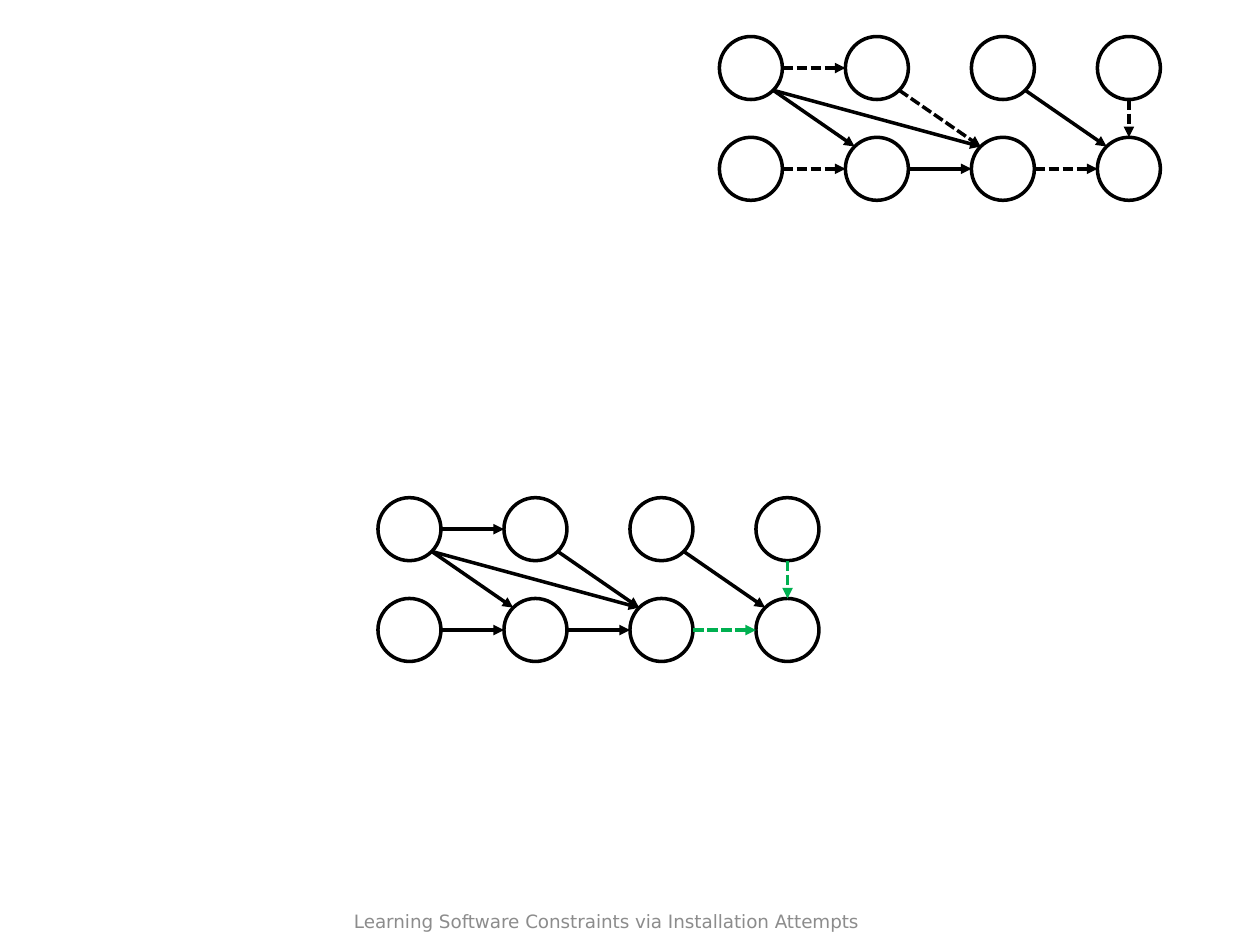
from math import hypot

from lxml.etree import SubElement
from pptx import Presentation
from pptx.dml.color import RGBColor
from pptx.enum.dml import MSO_LINE
from pptx.enum.shapes import MSO_CONNECTOR, MSO_SHAPE
from pptx.enum.text import MSO_ANCHOR
from pptx.oxml.ns import qn
from pptx.util import Pt

PX = 9144
COLORS = {"black": "000000", "white": "FFFFFF", "green": "00B050", "gray": "8C8C8C"}
NODE, COL_STEP, ROW_STEP, COLS, ROWS = 50, 100, 80, 4, 2
TOP, BOTTOM = 0, 1
EDGES = {
    "top link": ((0, TOP), (1, TOP)),
    "bottom link": ((0, BOTTOM), (1, BOTTOM)),
    "middle link": ((1, BOTTOM), (2, BOTTOM)),
    "last link": ((2, BOTTOM), (3, BOTTOM)),
    "first drop": ((0, TOP), (1, BOTTOM)),
    "long drop": ((0, TOP), (2, BOTTOM)),
    "second drop": ((1, TOP), (2, BOTTOM)),
    "third drop": ((2, TOP), (3, BOTTOM)),
    "straight drop": ((3, TOP), (3, BOTTOM)),
}
UNKNOWN = {"dash_style": MSO_LINE.SQUARE_DOT}
CANDIDATE = {"dash_style": MSO_LINE.SQUARE_DOT, "color": "green"}
OPEN_EDGES = ("top link", "bottom link", "last link", "second drop", "straight drop")
TESTED_EDGES = ("last link", "straight drop")


def rgb(name):
    """Return the named colour."""
    return RGBColor.from_string(COLORS[name])


def set_line(line, color="black", **formats):
    """Apply the common stroke and any further line formats."""
    line.color.rgb = rgb(color)
    for key, value in {"width": Pt(2), **formats}.items():
        setattr(line, key, value)


def add_node(s, x, y):
    """Draw one empty graph node."""
    sp = s.shapes.add_shape(MSO_SHAPE.OVAL, *(v * PX for v in (x, y, NODE, NODE)))
    sp.shadow.inherit = False
    sp.fill.solid()
    sp.fill.fore_color.rgb = rgb("white")
    set_line(sp.line)


def add_edge(s, x, y, start, end, formats):
    """Draw an arrow between the facing rims of two grid nodes."""
    side = [(b > a) - (b < a) for a, b in zip(start, end)]
    rim = [NODE / 2 * v / hypot(*side) for v in side]
    points = []
    for (col, row), sign in ((start, 1), (end, -1)):
        points.append(x + col * COL_STEP + NODE / 2 + sign * rim[0])
        points.append(y + row * ROW_STEP + NODE / 2 + sign * rim[1])
    cxn = s.shapes.add_connector(MSO_CONNECTOR.STRAIGHT, *(round(v * PX) for v in points))
    set_line(cxn.line, **formats)
    SubElement(cxn.line._get_or_add_ln(), qn("a:tailEnd"), type="triangle")
    SubElement(cxn._element.spPr, qn("a:effectLst"))


def add_graph(s, x, y, styles):
    """Draw the dependency graph with its top left corner at x, y."""
    for row in range(ROWS):
        for col in range(COLS):
            add_node(s, x + col * COL_STEP, y + row * ROW_STEP)
    for name, (start, end) in EDGES.items():
        add_edge(s, x, y, start, end, styles.get(name, {}))


def add_footer(s, x, y, w, h, text):
    """Place the footer line in the given box."""
    tf = s.shapes.add_textbox(*(v * PX for v in (x, y, w, h))).text_frame
    for key, value in {"word_wrap": True, "margin_left": 0,
                       "vertical_anchor": MSO_ANCHOR.MIDDLE}.items():
        setattr(tf, key, value)
    r = tf.paragraphs[0].add_run()
    r.text = text
    for key, value in {"name": "DejaVu Sans", "size": Pt(10.5)}.items():
        setattr(r.font, key, value)
    r.font.color.rgb = rgb("gray")


def main():
    """Build and save the slide."""
    prs = Presentation()
    prs.slide_width, prs.slide_height = 1000 * PX, 750 * PX
    s = prs.slides.add_slide(prs.slide_layouts[6])
    add_footer(s, 281, 711, 563, 40, "Learning Software Constraints via Installation Attempts")
    add_graph(s, 571, 29, dict.fromkeys(OPEN_EDGES, UNKNOWN))
    add_graph(s, 300, 395, dict.fromkeys(TESTED_EDGES, CANDIDATE))
    prs.save("out.pptx")


if __name__ == "__main__":
    main()
